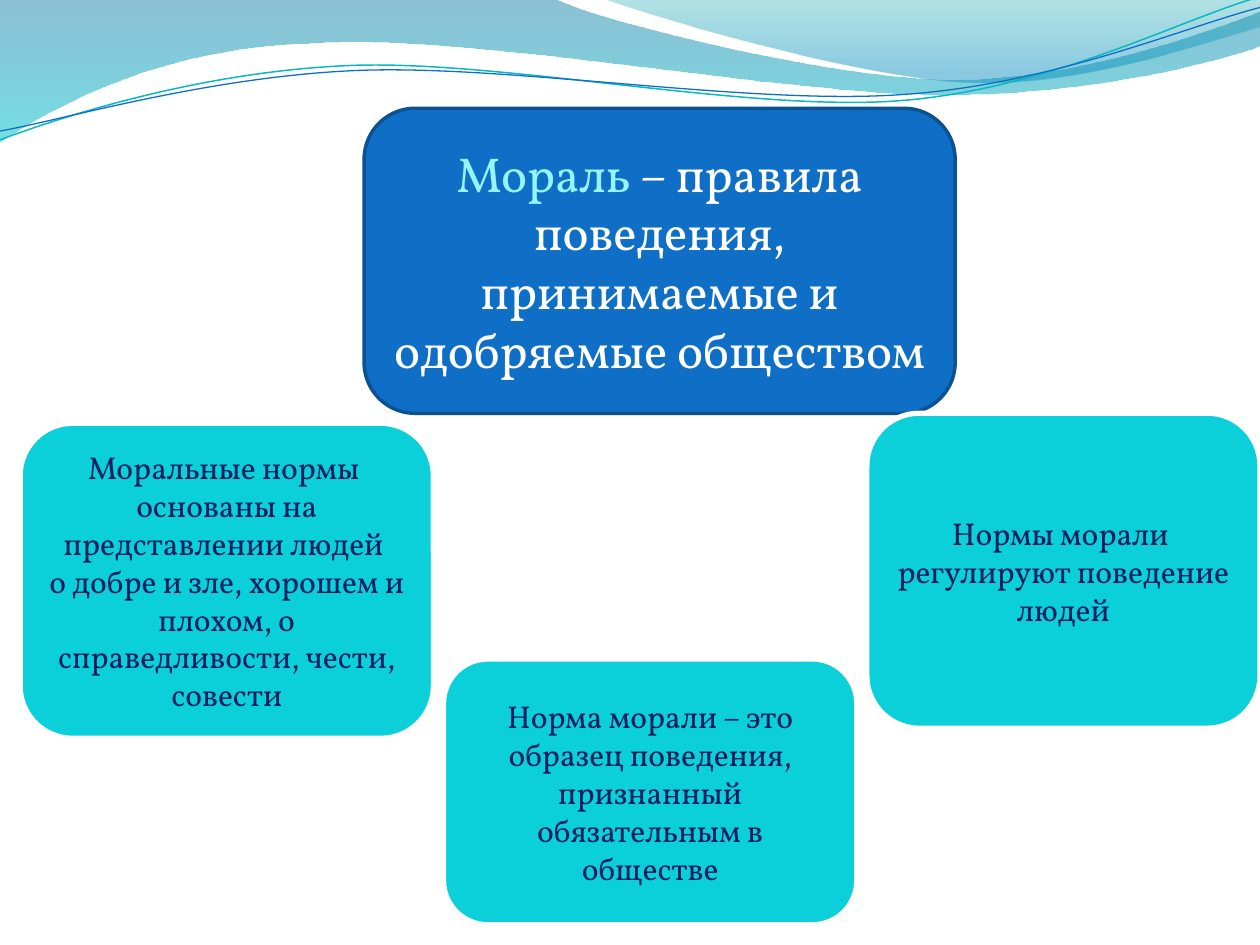
import math

from lxml import etree
from pptx import Presentation
from pptx import util as u
from pptx.dml.color import RGBColor
from pptx.enum import shapes, text
from pptx.oxml.ns import qn

FONT = "Vollkorn"
WHITE = RGBColor(0xFF, 0xFF, 0xFF)
BLUE = RGBColor(0x0F, 0x6F, 0xC6)
DARK_BLUE = RGBColor(0x0B, 0x52, 0x92)
NAVY = RGBColor(0x00, 0x20, 0x60)
TURQUOISE = RGBColor(0x0B, 0xD0, 0xD9)
PALE_CYAN = RGBColor(0x94, 0xF5, 0xFA)
TEAL_LINE = RGBColor(0x0A, 0xB8, 0xBF)

# Gradient stops: position, colour, opacity in percent
LEFT_WAVE_FILL = ((0, RGBColor(0x00, 0x74, 0xA1), 45), (1, RGBColor(0x00, 0xC6, 0xCF), 55))
RIGHT_WAVE_FILL = ((0, RGBColor(0x00, 0xA1, 0xA9), 30), (0.8, RGBColor(0x00, 0x8B, 0xBF), 45))

# Waves: a start point, then points (2 numbers) or Bezier curves (6 numbers)
LEFT_WAVE = [
    (0, 0), (4.4, -0.01),
    (4.76, 0.17, 6.64, 0.63, 7.58, 0.63), (8.53, 0.63, 9.58, 0.26, 10, 0.09),
    (10.01, 0.36),
    (9.83, 0.44, 8.7, 0.76, 7.46, 0.75), (6.22, 0.75, 3.82, 0.28, 2.57, 0.34),
    (1.29, 0.36, 0.46, 0.83, -0.01, 1.13), (0, 0),
]
RIGHT_WAVE = [
    (4.79, -0.01),
    (5.09, 0.11, 6.82, 0.62, 7.69, 0.65), (8.56, 0.69, 9.61, 0.32, 10, 0.21),
    (10, 0), (4.79, -0.01),
]
TEAL_CURVE = [
    (0, 1.11),
    (0.48, 0.93, 1.58, 0.57, 2.77, 0.52), (3.95, 0.47, 5.93, 0.89, 7.13, 0.8),
    (8.33, 0.71, 9.38, 0.15, 9.98, -0.02),
]
BLUE_CURVE = [
    (0, 1.04),
    (0.47, 0.96, 1.64, 0.61, 2.83, 0.56), (4.03, 0.51, 5.97, 0.84, 7.17, 0.75),
    (8.36, 0.67, 9.41, 0.21, 10, 0.06),
]
CURVE_TILT = -2.7


def turn(part, center, degrees):
    """Turn the points of one part clockwise about a center."""
    cx, cy = center
    cos, sin = math.cos(math.radians(degrees)), math.sin(math.radians(degrees))
    turned = []
    for x, y in zip(part[::2], part[1::2]):
        dx, dy = x - cx, y - cy
        turned += [cx + dx * cos - dy * sin, cy + dx * sin + dy * cos]
    return tuple(turned)


def bend(sp, parts):
    """Join every three line segments that stand for a curve into one Bezier."""
    segments = iter(list(sp._element.iter(qn("a:lnTo"))))
    for part in parts:
        first = next(segments)
        if len(part) == 6:
            first.tag = qn("a:cubicBezTo")
            for other in (next(segments), next(segments)):
                first.append(other[0])
                other.getparent().remove(other)


def add_run(p, words, size=18, color=NAVY):
    r = p.add_run()
    r.text = words
    r.font.name = FONT
    r.font.size = u.Pt(size)
    r.font.color.rgb = color


class MoralSlide:
    def __init__(self, prs):
        self.s = prs.slides.add_slide(prs.slide_layouts[6])

    def outline(self, parts, close):
        points = [(u.Inches(x), u.Inches(y))
                  for part in parts for x, y in zip(part[::2], part[1::2])]
        builder = self.s.shapes.build_freeform(*points[0])
        builder.add_line_segments(points[1:], close=close)
        sp = builder.convert_to_shape()
        bend(sp, parts[1:])
        sp.shadow.inherit = False
        return sp

    def wave(self, parts, stops):
        sp = self.outline(parts, close=True)
        sp.line.fill.background()
        sp.fill.gradient()
        sp.fill.gradient_angle = 270
        for stop, (position, color, _) in zip(sp.fill.gradient_stops, stops):
            stop.position = position
            stop.color.rgb = color
        colors = list(sp._element.spPr.iter(qn("a:srgbClr")))
        for node, (_, _, opacity) in zip(colors, stops):
            etree.SubElement(node, qn("a:alpha")).set("val", str(opacity * 1000))

    def curve(self, parts, center, color, width):
        level = [turn(part, center, -CURVE_TILT) for part in parts]
        sp = self.outline(level, close=False)
        sp.rotation = CURVE_TILT
        sp.fill.background()
        sp.line.color.rgb = color
        sp.line.width = u.Pt(width)

    def box(self, left, top, width, height, paragraphs,
            fill=TURQUOISE, line=WHITE, line_width=3):
        """Add a rounded box; each paragraph is a list of (words, format) runs."""
        sp = self.s.shapes.add_shape(
            shapes.MSO_SHAPE.ROUNDED_RECTANGLE,
            *(u.Inches(v) for v in (left, top, width, height)))
        sp.shadow.inherit = False
        sp.fill.solid()
        sp.fill.fore_color.rgb = fill
        sp.line.color.rgb = line
        sp.line.width = u.Pt(line_width)
        tf = sp.text_frame
        tf.word_wrap = True
        tf.vertical_anchor = text.MSO_ANCHOR.MIDDLE
        for i, runs in enumerate(paragraphs):
            p = tf.add_paragraph() if i else tf.paragraphs[0]
            p.alignment = text.PP_ALIGN.CENTER
            for words, style in runs:
                add_run(p, words, **style)


def main():
    prs = Presentation()
    prs.slide_width, prs.slide_height = u.Inches(10), u.Inches(7.5)
    slide = MoralSlide(prs)

    slide.wave(LEFT_WAVE, LEFT_WAVE_FILL)
    slide.wave(RIGHT_WAVE, RIGHT_WAVE_FILL)
    slide.curve(TEAL_CURVE, (4.99, 0.57), TEAL_LINE, 0.85)
    slide.curve(BLUE_CURVE, (5, 0.59), BLUE, 0.75)

    slide.box(2.89, 0.86, 4.69, 2.42, [[
        ("Мораль", {"size": 28, "color": PALE_CYAN}),
        (" – правила поведения, принимаемые и одобряемые обществом",
         {"size": 28, "color": WHITE}),
    ]], fill=BLUE, line=DARK_BLUE, line_width=2)
    slide.box(0.16, 3.36, 3.28, 2.5, [
        [("Моральные нормы  основаны на представлении людей ", {})],
        [("о добре и зле, хорошем и плохом, о справедливости, чести, совести", {})],
    ])
    slide.box(3.52, 5.23, 3.28, 2.11, [
        [("Норма морали – это образец поведения, признанный обязательным в обществе", {})],
    ])
    slide.box(6.88, 3.28, 3.12, 2.5, [
        [("Нормы морали  регулируют поведение людей", {})],
    ])
    prs.save("out.pptx")


if __name__ == "__main__":
    main()
